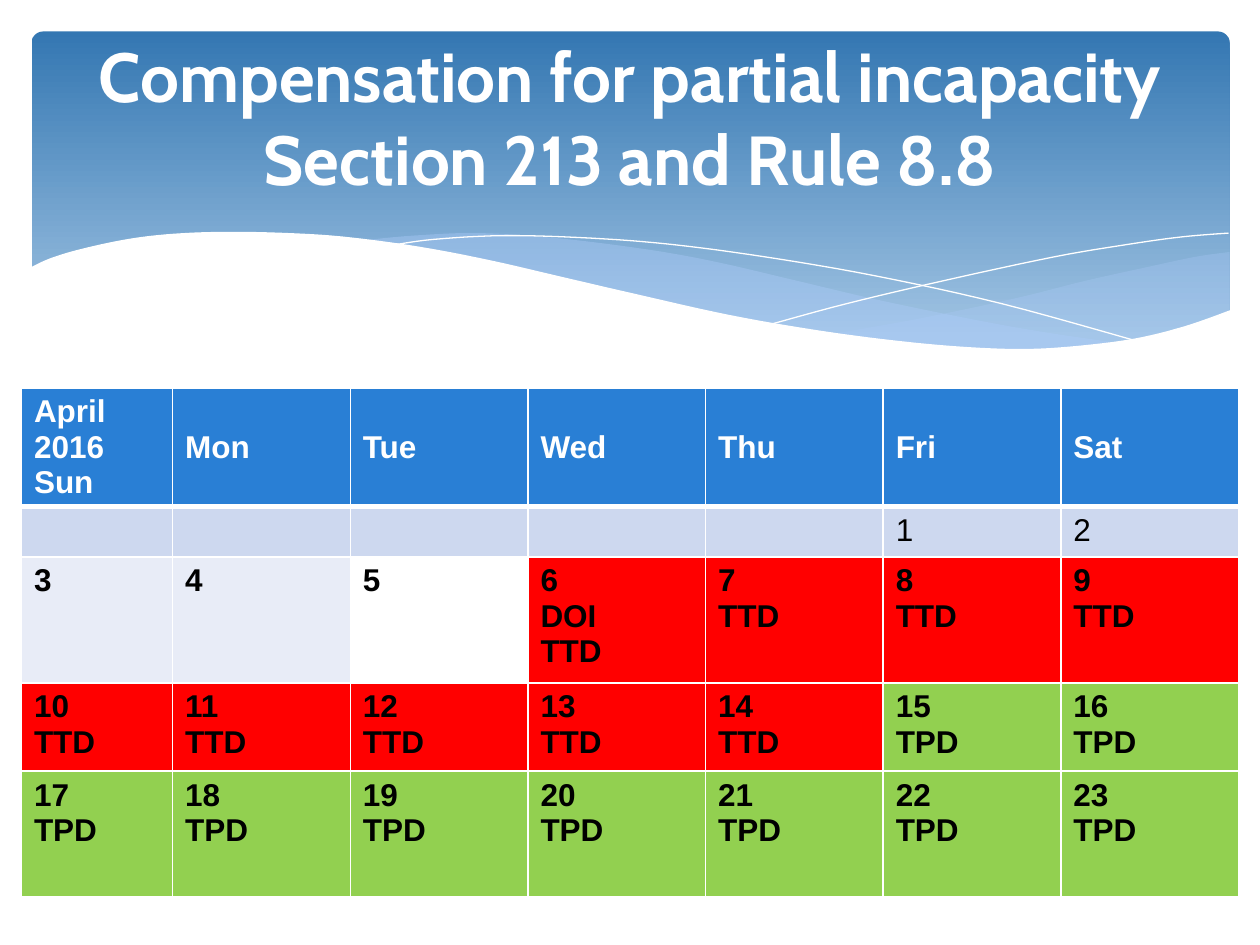
from dataclasses import dataclass

from lxml.etree import SubElement
from pptx import Presentation
from pptx.dml.color import RGBColor as Rgb
from pptx.enum.shapes import MSO_SHAPE as Preset
from pptx.enum.text import MSO_ANCHOR as Anchor, PP_ALIGN as Align
from pptx.oxml.ns import qn
from pptx.util import Inches, Pt


@dataclass(frozen=True)
class Theme:
    white: str = "FFFFFF"
    black: str = "000000"
    banner_top: str = "3477B2"
    banner_bottom: str = "A1C4E3"
    wave: str = "ACCBF9"
    header: str = "297FD5"
    band_dark: str = "CDD8EF"
    band_light: str = "E8ECF7"
    total: str = "FF0000"
    partial: str = "92D050"
    title_font: str = "Cabin"
    table_font: str = "Arial"
    title_size: float = 39.6
    table_size: float = 18


THEME = Theme()
WEEKDAYS = ["April 2016\nSun", "Mon", "Tue", "Wed", "Thu", "Fri", "Sat"]
COLUMN_WIDTHS = [1.2] + [1.41] * 6
ROW_HEIGHTS = [0.7, 0.4, 1, 0.7, 1]
FIRST_WEEKDAY = 5
INJURY_DAY = 6
FIRST_PARTIAL_DAY = 15

LIGHT_WAVE_TOP = [(9.76, 2), (9.48, 2.04), (9.06, 2.13), (8.61, 2.23),
                  (8.05, 2.37), (7.29, 2.53), (6.61, 2.65)]
LIGHT_WAVE_BOTTOM = [(6.61, 2.65), (7.19, 2.72), (7.69, 2.77), (8.14, 2.78),
                     (8.63, 2.75), (9.05, 2.69), (9.42, 2.59), (9.76, 2.47)]
LONG_WAVE_TOP = [(8.93, 2.73), (8.07, 2.6), (7.06, 2.4), (6.29, 2.22),
                 (5.69, 2.08), (5.14, 1.98), (4.42, 1.89), (3.8, 1.85),
                 (3.28, 1.87), (2.86, 1.91)]
LONG_WAVE_BOTTOM = [(2.86, 1.91), (3.62, 2.03), (4.49, 2.22), (5.3, 2.4),
                    (6.01, 2.55), (6.65, 2.66), (7.22, 2.74), (7.73, 2.77),
                    (8.18, 2.78), (8.57, 2.77), (8.93, 2.73)]
FALLING_LINE = [(3.09, 1.95), (3.44, 1.9), (4.01, 1.87), (4.69, 1.89),
                (5.33, 1.94), (6.08, 2.04), (6.95, 2.19), (7.95, 2.41),
                (9.07, 2.72)]
RISING_LINE = [(6.13, 2.57), (6.72, 2.41), (7.48, 2.23), (8.36, 2.04),
               (8.95, 1.94), (9.38, 1.88), (9.75, 1.85)]
BANNER_EDGE = [(9.77, 2.46), (9.4, 2.59), (8.99, 2.69), (8.5, 2.75),
               (8.09, 2.77), (7.61, 2.75), (7.08, 2.7), (6.48, 2.62),
               (5.79, 2.5), (5.03, 2.33), (4.47, 2.2), (3.91, 2.07),
               (3.4, 1.97), (2.92, 1.9), (2.5, 1.86), (1.93, 1.84),
               (1.46, 1.85), (1.06, 1.89), (0.67, 1.97), (0.4, 2.05),
               (0.23, 2.13)]


def smooth_curve(anchors, steps=6):
    """Return points of a Catmull-Rom spline through the anchors."""
    padded = [anchors[0], *anchors, anchors[-1]]
    points = [anchors[0]]
    for knots in zip(padded, padded[1:], padded[2:], padded[3:]):
        for step in range(1, steps + 1):
            t = step / steps
            points.append(tuple(
                b + t / 2 * (c - a + t * (2 * a - 5 * b + 4 * c - d
                                          + t * (3 * b - a - 3 * c + d)))
                for a, b, c, d in zip(*knots)))
    return points


class SlideBuilder:
    def __init__(self, page, theme):
        self.page = page
        self.theme = theme

    def style_paragraph(self, para, font, size, color, bold):
        para.font.name = font
        para.font.size = Pt(size)
        para.font.bold = bold
        para.font.color.rgb = Rgb.from_string(color)

    def banner(self, left, top, width, height):
        box = self.page.shapes.add_shape(
            Preset.ROUNDED_RECTANGLE,
            Inches(left), Inches(top), Inches(width), Inches(height))
        box.adjustments[0] = 0.034
        box.shadow.inherit = False
        box.line.fill.background()
        box.fill.gradient()
        box.fill.gradient_angle = 270
        colors = (self.theme.banner_top, self.theme.banner_bottom)
        for stop, color, position in zip(box.fill.gradient_stops, colors, (0, 0.9)):
            stop.color.rgb = Rgb.from_string(color)
            stop.position = position

    def outline(self, points, close):
        start, *others = [(Inches(x), Inches(y)) for x, y in points]
        builder = self.page.shapes.build_freeform(*start)
        builder.add_line_segments(others, close=close)
        shape = builder.convert_to_shape()
        shape.shadow.inherit = False
        return shape

    def area(self, points, color, opacity=100):
        shape = self.outline(points, close=True)
        shape.line.fill.background()
        shape.fill.solid()
        shape.fill.fore_color.rgb = Rgb.from_string(color)
        if opacity < 100:
            tint = shape.fill._xPr.find(qn("a:solidFill"))[0]
            SubElement(tint, qn("a:alpha"), val=str(opacity * 1000))

    def hairline(self, points):
        shape = self.outline(points, close=False)
        shape.fill.background()
        shape.line.color.rgb = Rgb.from_string(self.theme.white)
        shape.line.width = Pt(0)

    def title(self, text, left, top, width, height):
        frame = self.page.shapes.add_textbox(
            Inches(left), Inches(top), Inches(width), Inches(height)).text_frame
        frame.word_wrap = True
        frame.vertical_anchor = Anchor.MIDDLE
        para = frame.paragraphs[0]
        para.text = text
        para.alignment = Align.CENTER
        self.style_paragraph(para, self.theme.title_font, self.theme.title_size,
                             self.theme.white, True)

    def cell_borders(self, cell, bottom):
        properties = cell._tc.get_or_add_tcPr()
        for side, width in (("L", 1), ("R", 1), ("T", 1), ("B", bottom)):
            line = SubElement(properties, qn(f"a:ln{side}"), w=str(Pt(width)))
            fill = SubElement(line, qn("a:solidFill"))
            SubElement(fill, qn("a:srgbClr"), val=self.theme.white)

    def fill_cell(self, cell, text, fill, color, bold, bottom=1):
        self.cell_borders(cell, bottom)
        if fill:
            cell.fill.solid()
            cell.fill.fore_color.rgb = Rgb.from_string(fill)
        else:
            cell.fill.background()
        cell.text = text
        for para in cell.text_frame.paragraphs:
            self.style_paragraph(para, self.theme.table_font,
                                 self.theme.table_size, color, bold)

    def day_style(self, day):
        """Return the text and fill of a day's cell."""
        if day < 3:
            return (str(day) if day > 0 else ""), self.theme.band_dark
        if day < INJURY_DAY:
            return str(day), self.theme.band_light if day < 5 else None
        if day >= FIRST_PARTIAL_DAY:
            return f"{day}\nTPD", self.theme.partial
        mark = "DOI\n" if day == INJURY_DAY else ""
        return f"{day}\n{mark}TTD", self.theme.total

    def calendar(self, left, top):
        table = self.page.shapes.add_table(
            len(ROW_HEIGHTS), len(COLUMN_WIDTHS), Inches(left), Inches(top),
            Inches(sum(COLUMN_WIDTHS)), Inches(sum(ROW_HEIGHTS))).table
        table.horz_banding = False
        for column, width in zip(table.columns, COLUMN_WIDTHS):
            column.width = Inches(width)
        for row, height in zip(table.rows, ROW_HEIGHTS):
            row.height = Inches(height)
        for index, name in enumerate(WEEKDAYS):
            header = table.cell(0, index)
            header.vertical_anchor = Anchor.MIDDLE
            self.fill_cell(header, name, self.theme.header, self.theme.white,
                           True, bottom=3)
            for week in range(len(ROW_HEIGHTS) - 1):
                day = week * 7 + index - FIRST_WEEKDAY + 1
                text, fill = self.day_style(day)
                self.fill_cell(table.cell(week + 1, index), text, fill,
                               self.theme.black, week > 0)


def main():
    deck = Presentation()
    deck.slide_width, deck.slide_height = Inches(10), Inches(7.5)
    slide = SlideBuilder(deck.slides.add_slide(deck.slide_layouts[6]), THEME)
    slide.banner(0.25, 0.25, 9.51, 2.7)
    slide.area(smooth_curve(LIGHT_WAVE_TOP) + smooth_curve(LIGHT_WAVE_BOTTOM), THEME.wave, 29)
    slide.area(smooth_curve(LONG_WAVE_TOP) + smooth_curve(LONG_WAVE_BOTTOM), THEME.wave, 40)
    slide.hairline(smooth_curve(FALLING_LINE))
    slide.hairline(smooth_curve(RISING_LINE))
    slide.area(smooth_curve(BANNER_EDGE) + [(0.23, 3.29), (9.77, 3.29)], THEME.white)
    slide.calendar(0.17, 3.08)
    slide.title("Compensation for partial incapacity\vSection 213 and Rule 8.8",
                0, 0.3, 10, 1.25)
    deck.save("out.pptx")


if __name__ == "__main__":
    main()
